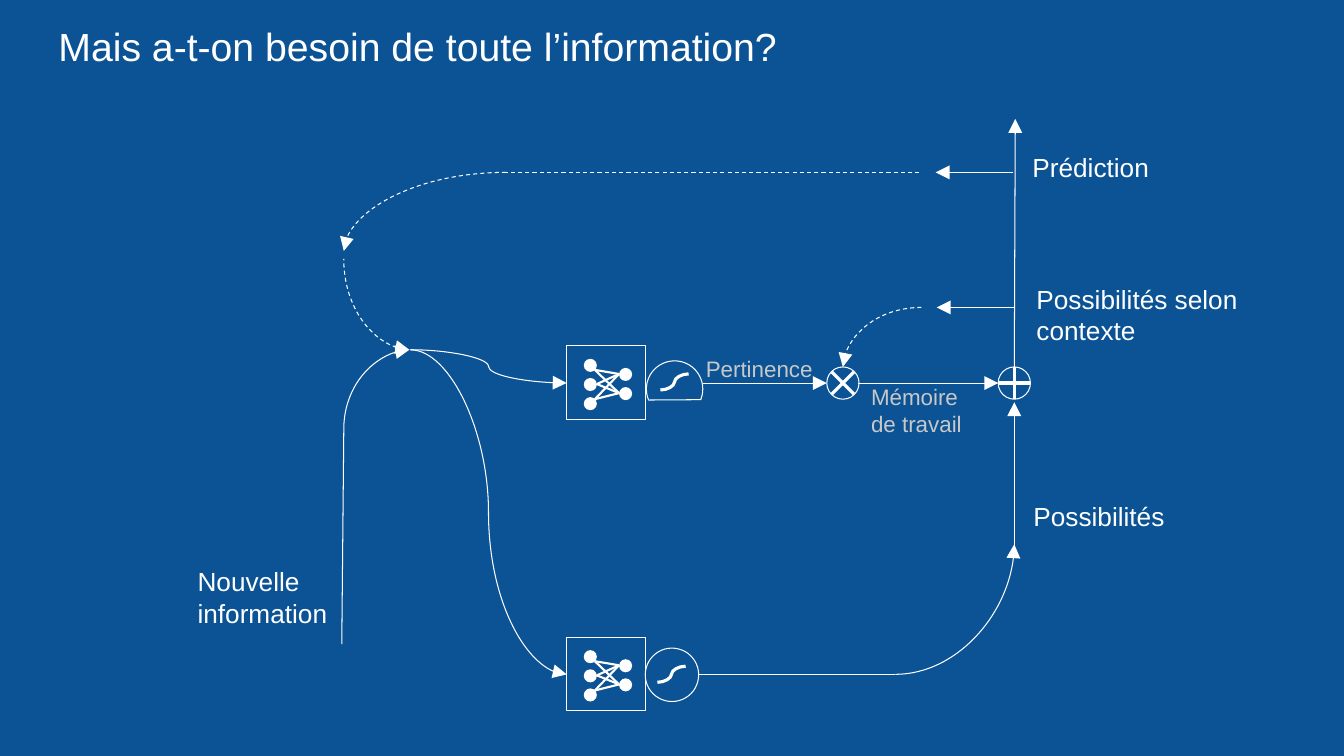
from dataclasses import dataclass

from lxml import etree
from pptx import Presentation
from pptx.dml.color import RGBColor
from pptx.enum.dml import MSO_LINE
from pptx.enum.shapes import MSO_CONNECTOR, MSO_SHAPE
from pptx.enum.text import MSO_ANCHOR
from pptx.oxml.ns import qn
from pptx.util import Pt

PX = 9144
STRAIGHT, CURVE = MSO_CONNECTOR.STRAIGHT, MSO_CONNECTOR.CURVE
OVAL, RECT, CHORD = MSO_SHAPE.OVAL, MSO_SHAPE.RECTANGLE, MSO_SHAPE.CHORD
DASH, TOP = MSO_LINE.DASH, MSO_ANCHOR.TOP


@dataclass(frozen=True)
class Theme:
    font: str = "Arial"
    background: RGBColor = RGBColor(0x0B, 0x53, 0x94)
    ink: RGBColor = RGBColor(0xFF, 0xFF, 0xFF)
    muted: RGBColor = RGBColor(0xC8, 0xC8, 0xC8)
    title: float = 28
    label: float = 18.7
    note: float = 16
    thin: float = 0.75
    medium: float = 1.5
    thick: float = 2.25
    inset: int = 13


class Diagram:
    def __init__(self, prs, theme):
        self.t = theme
        self.s = prs.slides.add_slide(prs.slide_layouts[6])
        fill = self.s.background.fill
        fill.solid()
        fill.fore_color.rgb = theme.background

    def text(self, x, y, w, h, text, size, color):
        tb = self.s.shapes.add_textbox(x * PX, y * PX, w * PX, h * PX)
        tf = tb.text_frame
        tf.word_wrap = True
        tf.vertical_anchor = TOP
        tf.margin_left = tf.margin_right = self.t.inset * PX
        tf.margin_top = tf.margin_bottom = self.t.inset * PX
        r = tf.paragraphs[0].add_run()
        r.text = text
        r.font.name = self.t.font
        r.font.size = Pt(size)
        r.font.color.rgb = color

    def label(self, x, y, w, h, text):
        self.text(x, y, w, h, text, self.t.label, self.t.ink)

    def note(self, x, y, w, h, text):
        self.text(x, y, w, h, text, self.t.note, self.t.muted)

    def shape(self, kind, x, y, w, h, filled=False, rotation=0):
        sp = self.s.shapes.add_shape(kind, x * PX, y * PX, w * PX, h * PX)
        sp.shadow.inherit = False
        sp.rotation = rotation
        if filled:
            sp.fill.solid()
            sp.fill.fore_color.rgb = self.t.ink
            sp.line.fill.background()
        else:
            sp.fill.background()
            sp.line.color.rgb = self.t.ink
            sp.line.width = Pt(self.t.thin)

    def line(self, x1, y1, x2, y2, width=None, arrow=None, dash=False, kind=STRAIGHT):
        c = self.s.shapes.add_connector(kind, x1 * PX, y1 * PX, x2 * PX, y2 * PX)
        c.line.color.rgb = self.t.ink
        c.line.width = Pt(width or self.t.thin)
        if dash:
            c.line.dash_style = DASH
        spPr = c._element.spPr
        if arrow:
            etree.SubElement(spPr.find(qn("a:ln")), qn(f"a:{arrow}End"),
                             type="triangle", w="lg", len="lg")
        etree.SubElement(spPr, qn("a:effectLst"))
        return c

    def arrow(self, x1, y1, x2, y2):
        self.line(x1, y1, x2, y2, arrow="tail")

    def s_curve(self, x1, y1, x2, y2, width=None, arrow=None):
        self.line(x1, y1, x2, y2, width, arrow, kind=CURVE)

    def bend(self, x1, y1, x2, y2, arrow="tail", dash=False):
        c = self.line(x1, y1, x2, y2, arrow=arrow, dash=dash, kind=CURVE)
        c._element.spPr.find(qn("a:prstGeom")).set("prst", "curvedConnector2")

    def network(self, x, y):
        for dx, dy in ((17, 13), (17, 32), (17, 51), (52, 22), (52, 41)):
            self.shape(OVAL, x + dx, y + dy, 13, 13, filled=True)
        for dx, dy in ((28, 24), (28, 53), (30, 38)):
            for out in (28, 47):
                self.line(x + dx, y + dy, x + 52, y + out, self.t.medium)
        self.shape(RECT, x, y, 78, 73)

    def sigmoid(self, x, y):
        self.s_curve(x, y + 16, x + 28, y, self.t.thick)

    def gate(self, cx, cy, spokes):
        self.shape(OVAL, cx - 16, cy - 16, 32, 32)
        for dx, dy in spokes:
            self.line(cx - dx, cy - dy, cx + dx, cy + dy, self.t.thick)


def main():
    prs = Presentation()
    prs.slide_width, prs.slide_height = 1333 * PX, 750 * PX
    theme = Theme()
    d = Diagram(prs, theme)

    d.text(45, 9, 1260, 100, "Mais a-t-on besoin de toute l’information?", theme.title, theme.ink)

    d.arrow(1006, 364, 1007, 118)
    d.arrow(1005, 171, 928, 171)
    d.line(912, 171, 502, 171, dash=True)
    d.bend(502, 171, 341, 249, dash=True)
    d.bend(406, 347, 341, 257, arrow="head", dash=True)
    d.arrow(1007, 305, 929, 305)
    d.bend(914, 305, 836, 364, dash=True)

    d.line(341, 426, 339, 639)
    d.bend(406, 347, 341, 426, arrow="head")
    for y in (380, 669):
        d.s_curve(407, 347, 562, y, arrow="tail")

    for y in (343, 632):
        d.network(562, y)
    d.shape(CHORD, 641, 358, 56, 56, rotation=112.1)
    d.sigmoid(655, 371)
    d.shape(OVAL, 640, 643, 53, 53)
    d.sigmoid(652, 661)

    d.arrow(697, 380, 820, 380)
    d.gate(836, 380, ((11, 11), (11, -11)))
    d.arrow(851, 380, 990, 380)
    d.gate(1006, 380, ((16, 0), (0, 16)))

    d.line(692, 669, 888, 669)
    d.bend(888, 669, 1006, 540)
    d.arrow(1006, 549, 1006, 399)

    d.label(1011, 137, 290, 59, "Prédiction")
    d.label(1015, 268, 228, 59, "Possibilités selon contexte")
    d.label(1012, 483, 174, 59, "Possibilités")
    d.label(183, 548, 160, 105, "Nouvelle information")
    d.note(687, 339, 139, 59, "Pertinence")
    d.note(851, 367, 133, 59, "Mémoire de travail")

    prs.save("out.pptx")


if __name__ == "__main__":
    main()
